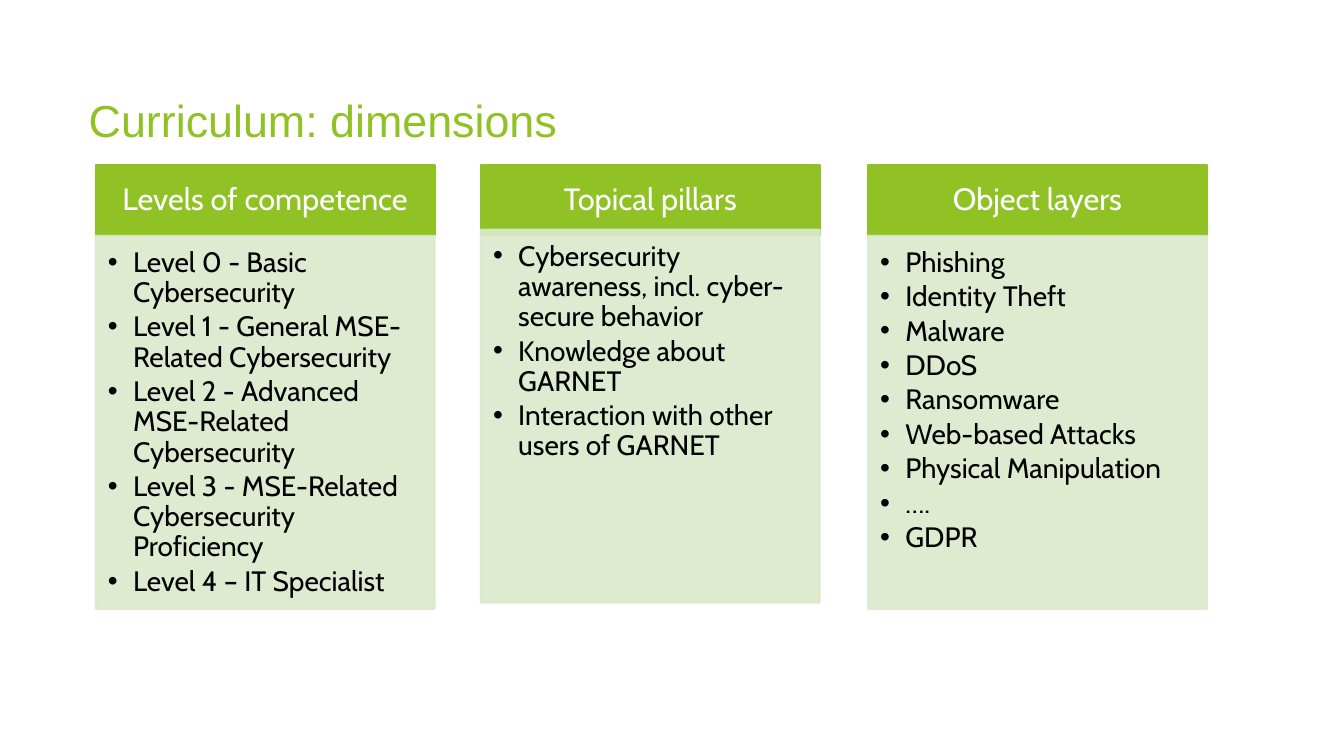
from pptx import Presentation
from pptx import util as u
from pptx.dml.color import RGBColor
from pptx.enum import shapes, text
from pptx.oxml.ns import qn
from lxml import etree

GREEN, PALE, WHITE, BLACK = "90C226", "DBE9CD", "FFFFFF", "000000"
COLUMN_W, HEADER_H, BODY_H = 3.36, 0.69, 3.7

# left edge, top of the body, heading, items
COLUMNS = [
    (0.95, 2.34, "Levels of competence", [
        "Level 0 - Basic Cybersecurity",
        "Level 1 - General MSE-Related Cybersecurity",
        "Level 2 - Advanced MSE-Related Cybersecurity",
        "Level 3 - MSE-Related Cybersecurity Proficiency",
        "Level 4 – IT Specialist"]),
    (4.77, 2.28, "Topical pillars", [
        "Cybersecurity awareness, incl. cyber-secure behavior",
        "Knowledge about GARNET",
        "Interaction with other users of GARNET"]),
    (8.61, 2.34, "Object layers", [
        "Phishing", "Identity Theft", "Malware", "DDoS", "Ransomware",
        "Web-based Attacks", "Physical Manipulation", "….", "GDPR"]),
]


def rgb(color):
    return RGBColor.from_string(color)


def set_font(font, name, size, color):
    font.name, font.size = name, u.Pt(size)
    font.color.rgb = rgb(color)


def set_alpha(sp, percent):
    """Make the fill and the line of a shape partly transparent."""
    for clr in sp._element.spPr.iter(qn("a:srgbClr")):
        etree.SubElement(clr, qn("a:alpha")).set("val", str(percent * 1000))


def add_bullet(p, indent):
    pPr = p._p.get_or_add_pPr()
    pPr.set("marL", str(u.Inches(indent)))
    pPr.set("indent", str(u.Inches(-indent)))
    etree.SubElement(pPr, qn("a:buFont")).set("typeface", "Arial")
    etree.SubElement(pPr, qn("a:buChar")).set("char", "•")


def add_box(s, left, top, width, height, color, insets):
    sp = s.shapes.add_shape(shapes.MSO_SHAPE.RECTANGLE, u.Inches(left), u.Inches(top),
                            u.Inches(width), u.Inches(height))
    sp.shadow.inherit = False
    sp.fill.solid()
    sp.fill.fore_color.rgb = rgb(color)
    sp.line.color.rgb = rgb(color)
    sp.line.width = u.Pt(1.5)
    tf = sp.text_frame
    tf.word_wrap = True
    tf.margin_left, tf.margin_top, tf.margin_right, tf.margin_bottom = map(u.Inches, insets)
    return sp


def add_title(s, left, top, width, height):
    title = s.shapes.title
    title.left, title.top = u.Inches(left), u.Inches(top)
    title.width, title.height = u.Inches(width), u.Inches(height)
    tf = title.text_frame
    tf.text = "Curriculum: dimensions"
    tf.vertical_anchor = text.MSO_ANCHOR.MIDDLE
    p = tf.paragraphs[0]
    p.alignment = text.PP_ALIGN.LEFT
    set_font(p.runs[0].font, "Arial", 32, GREEN)


def add_header(s, left, top, width, height, heading):
    tf = add_box(s, left, top, width, height, GREEN, (0.17, 0.1, 0.17, 0.1)).text_frame
    tf.text = heading
    tf.vertical_anchor = text.MSO_ANCHOR.MIDDLE
    p = tf.paragraphs[0]
    p.alignment = text.PP_ALIGN.CENTER
    p.line_spacing = 0.9
    set_font(p.runs[0].font, "Cabin", 22, WHITE)


def add_body(s, left, top, width, height, items):
    sp = add_box(s, left, top, width, height, PALE, (0.12, 0.12, 0.16, 0.17))
    set_alpha(sp, 90)
    tf = sp.text_frame
    tf.text = "\n".join(items)
    tf.vertical_anchor = text.MSO_ANCHOR.TOP
    for p in tf.paragraphs:
        p.alignment = text.PP_ALIGN.LEFT
        p.level = 1
        p.line_spacing = 0.9
        p.space_after = u.Pt(3)
        add_bullet(p, 0.25)
        set_font(p.runs[0].font, "Cabin", 20, BLACK)


def main():
    prs = Presentation()
    prs.slide_width, prs.slide_height = u.Inches(13.33), u.Inches(7.5)
    s = prs.slides.add_slide(prs.slide_layouts[5])
    add_title(s, 0.78, 0.81, 9.33, 0.76)
    for left, body_top, heading, items in COLUMNS:
        add_header(s, left, 1.64, COLUMN_W, HEADER_H, heading)
        add_body(s, left, body_top, COLUMN_W, BODY_H, items)
    prs.save("out.pptx")


if __name__ == "__main__":
    main()
